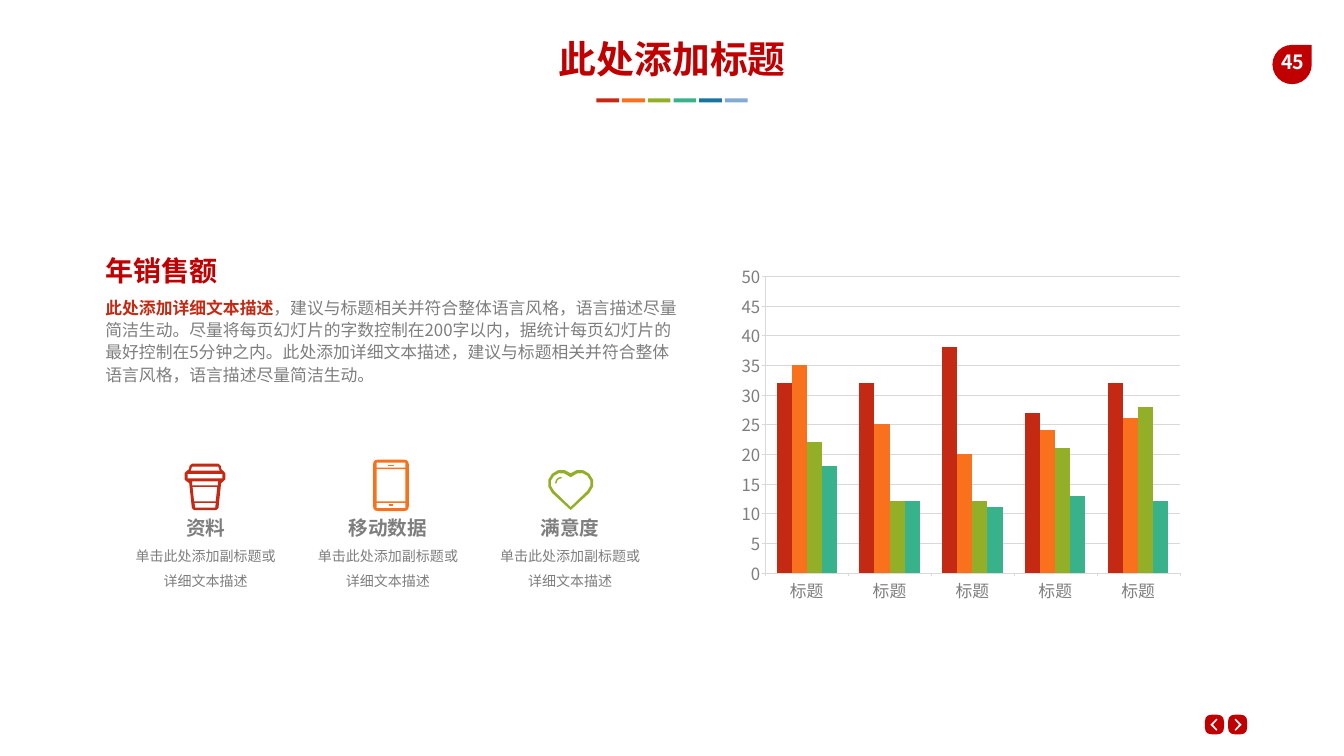
from math import dist

from lxml.etree import SubElement
from pptx import Presentation
from pptx.chart.data import CategoryChartData
from pptx.dml.color import RGBColor
from pptx.enum.chart import XL_CHART_TYPE, XL_TICK_MARK
from pptx.enum.shapes import MSO_SHAPE
from pptx.enum.text import MSO_ANCHOR, MSO_AUTO_SIZE, PP_ALIGN
from pptx.oxml.ns import qn
from pptx.util import Inches, Pt

FONT = "Noto Sans CJK SC"
RED, GREY, WHITE, GRID = "C00000", "7E7E7E", "FFFFFF", "D9D9D9"
PALETTE = ["C42A13", "F9711C", "92AF27", "38B28A", "16749F", "82AAD2"]

TITLE = "此处添加标题"
PAGE = "45"
HEADING = "年销售额"
LEAD = "此处添加详细文本描述"
BODY = ("，建议与标题相关并符合整体语言风格，语言描述尽量简洁生动。"
        "尽量将每页幻灯片的字数控制在200字以内，据统计每页幻灯片的最好控制在5分钟之内。"
        "此处添加详细文本描述，建议与标题相关并符合整体语言风格，语言描述尽量简洁生动。")
FEATURES = ["资料", "移动数据", "满意度"]
CAPTION = "单击此处添加副标题或详细文本描述"
CATEGORIES = ["标题"] * 5
SERIES = {
    "Series 1": [32, 32, 38, 27, 32],
    "Series 2": [35, 25, 20, 24, 26],
    "Series 3": [22, 12, 12, 21, 28],
    "Series 4": [18, 12, 11, 13, 12],
}


def color(value):
    return RGBColor.from_string(value)


def add_east_asian(font_properties):
    """Use the font for Chinese characters as well as Latin ones."""
    SubElement(font_properties, qn("a:ea")).set("typeface", FONT)


def write(paragraph, text, size, tint, bold=False):
    run = paragraph.add_run()
    run.text = text
    run.font.color.rgb = color(tint)
    for name, value in {"name": FONT, "size": Pt(size), "bold": bold}.items():
        setattr(run.font, name, value)
    add_east_asian(run._r.get_or_add_rPr())


def add_text(slide, place, runs, align=PP_ALIGN.LEFT, spacing=None, wrap=True):
    frame = slide.shapes.add_textbox(*map(Inches, place)).text_frame
    settings = {"word_wrap": wrap, "auto_size": MSO_AUTO_SIZE.SHAPE_TO_FIT_TEXT,
                "margin_left": Inches(0.2), "margin_right": Inches(0.2),
                "margin_top": Inches(0.1), "margin_bottom": Inches(0.1)}
    for name, value in settings.items():
        setattr(frame, name, value)
    paragraph = frame.paragraphs[0]
    paragraph.alignment = align
    paragraph.line_spacing = spacing
    for run in runs:
        write(paragraph, *run)


def paint(shape, tint):
    shape.shadow.inherit = False
    shape.fill.solid()
    shape.fill.fore_color.rgb = color(tint)
    shape.line.fill.background()


def add_preset(slide, kind, place, tint):
    paint(slide.shapes.add_shape(kind, *map(Inches, place)), tint)


def add_outline(slide, contours, tint):
    """Draw closed contours as one shape; inner contours are holes."""
    contours = [[(Inches(x), Inches(y)) for x, y in contour] for contour in contours]
    builder = slide.shapes.build_freeform(*contours[0][0])
    for index, (start, *rest) in enumerate(contours):
        if index:
            builder.move_to(*start)
        builder.add_line_segments(rest, close=True)
    paint(builder.convert_to_shape(), tint)


def bezier(controls, steps=3):
    """Points along a curve with any number of control points."""
    points = []
    for step in range(steps + 1):
        t, level = step / steps, controls
        while len(level) > 1:
            level = [(ax + (bx - ax) * t, ay + (by - ay) * t)
                     for (ax, ay), (bx, by) in zip(level, level[1:])]
        points.append(level[0])
    return points


def rounded(corners, radius, steps=3):
    points = []
    for index, corner in enumerate(corners):
        ends = []
        for other in (corners[index - 1], corners[(index + 1) % len(corners)]):
            length = dist(corner, other)
            share = min(radius, length / 2) / length
            ends.append(tuple(a + (b - a) * share for a, b in zip(corner, other)))
        points += bezier([ends[0], corner, ends[1]], steps)
    return points


def box(left, top, right, bottom):
    return [(left, top), (right, top), (right, bottom), (left, bottom)]


def heart(curves, tip):
    """Mirror half a heart, given as the curves of one lobe and the bottom tip."""
    half = bezier(curves[0]) + bezier(curves[1])[1:]
    return half + [tip] + [(2 * 11.32 - x, y) for x, y in reversed(half[1:])]


def add_icons(slide):
    cup = [(3.77, 9.2), (4.37, 9.2), (4.4, 9.35), (4.47, 9.35), (4.47, 9.55), (4.39, 9.55),
           (4.33, 10.12), (3.81, 10.12), (3.75, 9.55), (3.66, 9.55), (3.66, 9.35), (3.74, 9.35)]
    cup_holes = [
        [(3.81, 9.26), (4.33, 9.26), (4.36, 9.34), (3.78, 9.34)],
        box(3.72, 9.4, 4.41, 9.49),
        [(3.81, 9.55), (4.33, 9.55), (4.32, 9.63), (3.81, 9.63)],
        [(3.82, 9.66), (4.31, 9.66), (4.28, 9.95), (3.85, 9.95)],
        [(3.86, 9.98), (4.28, 9.98), (4.27, 10.07), (3.87, 10.07)],
    ]
    add_outline(slide, [rounded(cup, 0.04, 1), *cup_holes], PALETTE[0])

    phone_holes = [(7.47, 9.18, 8.04, 9.28), (7.47, 9.31, 8.04, 9.95), (7.47, 9.98, 8.04, 10.08)]
    add_outline(slide, [rounded(box(7.4, 9.12, 8.11, 10.14), 0.1),
                        *(box(*hole) for hole in phone_holes)], PALETTE[1])
    for mark in [(7.69, 9.22, 7.82, 9.24), (7.72, 10.01, 7.79, 10.04)]:
        add_outline(slide, [box(*mark)], PALETTE[1])

    outer = heart([[(11.32, 9.39), (11.21, 9.29), (11.05, 9.3), (10.95, 9.4)],
                   [(10.95, 9.4), (10.84, 9.5), (10.84, 9.67), (10.95, 9.78)]], (11.32, 10.12))
    inner = heart([[(11.32, 9.47), (11.2, 9.36), (11.07, 9.36), (10.99, 9.44)],
                   [(10.99, 9.44), (10.9, 9.52), (10.9, 9.65), (10.99, 9.74)]], (11.32, 10.06))
    add_outline(slide, [outer, inner], PALETTE[2])
    glint = (bezier([(11.14, 9.46), (11.06, 9.46), (11.01, 9.52), (11.01, 9.59)])
             + bezier([(11.04, 9.59), (11.04, 9.53), (11.08, 9.49), (11.14, 9.49)]))
    add_outline(slide, [glint], PALETTE[2])


def add_navigation(slide):
    arrow = [(-0.08, 0), (0.04, -0.12), (0.06, -0.1), (-0.03, 0), (0.06, 0.1), (0.04, 0.12)]
    for center, direction in [(24.09, 1), (24.55, -1)]:
        button = box(center - 0.19, 14.18, center + 0.19, 14.57)
        add_outline(slide, [rounded(button, 0.14)], RED)
        corners = [(center + direction * x, 14.38 + y) for x, y in arrow]
        add_outline(slide, [corners], WHITE)


def add_sales_chart(slide):
    data = CategoryChartData()
    data.categories = CATEGORIES
    for name, values in SERIES.items():
        data.add_series(name, values)
    place = map(Inches, (14.53, 5.1, 9.05, 6.98))
    chart = slide.shapes.add_chart(XL_CHART_TYPE.COLUMN_CLUSTERED, *place, data).chart
    chart.has_legend = chart.has_title = False
    chart.font.name, chart.font.size = FONT, Pt(24)
    chart.font.color.rgb = color(GREY)
    add_east_asian(chart.element.find(".//" + qn("a:defRPr")))

    plot = chart.plots[0]
    plot.gap_width, plot.overlap, plot.vary_by_categories = 150, 0, False
    for series, tint in zip(plot.series, PALETTE):
        series.format.fill.solid()
        series.format.fill.fore_color.rgb = color(tint)

    axis = chart.value_axis
    axis.minimum_scale, axis.maximum_scale, axis.major_unit = 0, 50, 5
    for item in (chart.category_axis, axis):
        item.major_tick_mark = XL_TICK_MARK.OUTSIDE
    for line in (chart.category_axis.format.line, axis.format.line, axis.major_gridlines.format.line):
        line.color.rgb = color(GRID)
        line.width = Pt(0.25)


def main():
    presentation = Presentation()
    presentation.slide_width, presentation.slide_height = Inches(26.66), Inches(15)
    slide = presentation.slides.add_slide(presentation.slide_layouts[5])

    title = slide.shapes.title
    title.left, title.top, title.width, title.height = map(Inches, (8.43, 0.65, 9.81, 1.01))
    title.text_frame.auto_size = MSO_AUTO_SIZE.SHAPE_TO_FIT_TEXT
    title.text_frame.vertical_anchor = MSO_ANCHOR.TOP
    title.text_frame.paragraphs[0].alignment = PP_ALIGN.CENTER
    write(title.text_frame.paragraphs[0], TITLE, 54, RED, True)
    for index, tint in enumerate(PALETTE):
        add_preset(slide, MSO_SHAPE.RECTANGLE, (11.83 + 0.51 * index, 1.95, 0.45, 0.08), tint)

    add_navigation(slide)
    add_preset(slide, MSO_SHAPE.TEAR, (25.24, 0.89, 0.78, 0.78), RED)
    add_text(slide, (25.16, 0.9, 0.97, 0.67), [(PAGE, 28, WHITE, True)], PP_ALIGN.CENTER, wrap=False)

    add_sales_chart(slide)
    add_text(slide, (1.89, 4.92, 12.66, 0.88), [(HEADING, 40, RED, True)])
    add_text(slide, (1.89, 5.77, 11.85, 1.98),
             [(LEAD, 24, PALETTE[0], True), (BODY, 24, GREY)], spacing=1.1)
    for index, label in enumerate(FEATURES):
        left, width = 2.41 + 3.615 * index, 3.34
        label_width = 0.4 + 0.39 * len(label)
        add_text(slide, (left, 10.6, width, 1.21), [(CAPTION, 20, GREY)], PP_ALIGN.CENTER, 1.5)
        add_text(slide, (left + (width - label_width) / 2, 10.14, label_width, 0.67),
                 [(label, 28, GREY, True)], PP_ALIGN.CENTER, wrap=False)
    add_icons(slide)
    presentation.save("out.pptx")


if __name__ == "__main__":
    main()
